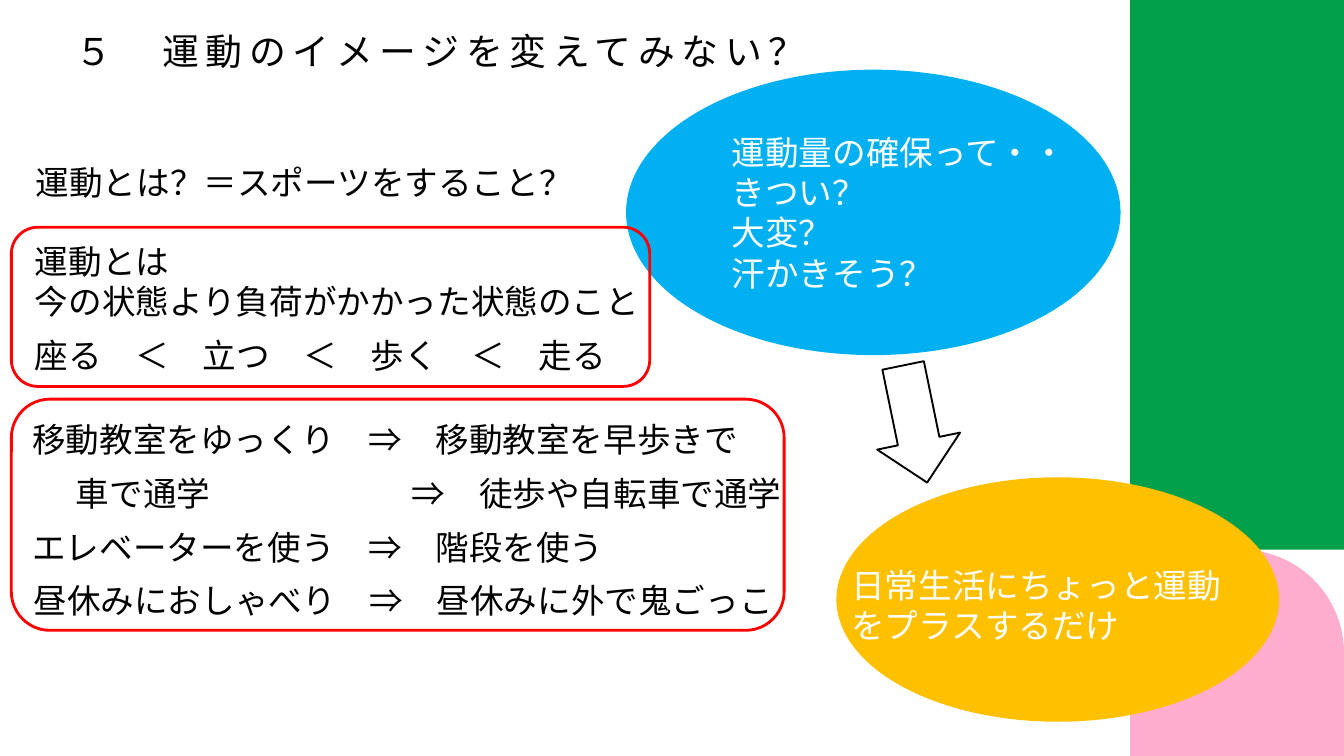
from lxml import etree
from pptx import Presentation
from pptx.dml.color import RGBColor
from pptx.enum.shapes import MSO_SHAPE as Preset
from pptx.enum.text import PP_ALIGN as Align
from pptx.oxml.ns import qn
from pptx.util import Cm, Pt

FONT = "Noto Sans CJK JP"
COLORS = {
    "green": "02A04A",
    "pink": "FFADCF",
    "orange": "FFC000",
    "blue": "00B0F0",
    "red": "FF0000",
    "black": "000000",
    "white": "FFFFFF",
}
# Left edge and wording of each everyday change; the tab lines up the arrow
CHANGES = [
    (1.22, "移動教室をゆっくり　⇒　移動教室を早歩きで"),
    (2.87, "車で通学\t⇒　徒歩や自転車で通学"),
    (1.22, "エレベーターを使う　⇒　階段を使う"),
    (1.27, "昼休みにおしゃべり　⇒　昼休みに外で鬼ごっこ"),
]
CHANGES_TOP, CHANGES_STEP = 15.85, 2.03
ARROW_TAB = 12.7


def rgb(name):
    return RGBColor.from_string(COLORS[name])


def add_figure(page, preset, place, fill=None, line=None, weight=2):
    figure = page.shapes.add_shape(preset, *map(Cm, place))
    figure.shadow.inherit = False
    if fill:
        figure.fill.solid()
        figure.fill.fore_color.rgb = rgb(fill)
    else:
        figure.fill.background()
    if line:
        figure.line.color.rgb = rgb(line)
        figure.line.width = Pt(weight)
    else:
        figure.line.fill.background()
    return figure


def add_tab_stop(para, position):
    tabs = etree.SubElement(para._p.get_or_add_pPr(), qn("a:tabLst"))
    etree.SubElement(tabs, qn("a:tab"), pos=str(Cm(position)), algn="l")


def add_text(page, text, place, color="black", size=36, leading=43.2, spacing=0):
    """Add a text box without margins; leading and spacing are in points."""
    box = page.shapes.add_textbox(*map(Cm, place))
    frame = box.text_frame
    frame.word_wrap = True
    frame.margin_left = frame.margin_right = 0
    frame.margin_top = frame.margin_bottom = 0
    frame.text = text
    for para in frame.paragraphs:
        para.alignment = Align.LEFT
        para.line_spacing = Pt(leading)
        if "\t" in text:
            add_tab_stop(para, ARROW_TAB)
        for span in para.runs:
            span.font.size = Pt(size)
            span.font.name = FONT
            span.font.color.rgb = rgb(color)
            properties = span._r.get_or_add_rPr()
            etree.SubElement(properties, qn("a:ea"), typeface=FONT)
            if spacing:
                properties.set("spc", str(round(spacing * 100)))


def add_side_panels(page):
    add_figure(page, Preset.RECTANGLE, (42.72, 0, 8.08, 20.78), "green")
    arch = add_figure(page, Preset.ROUND_2_SAME_RECTANGLE,
                      (42.72, 20.78, 8.08, 7.8), "pink")
    arch.adjustments[0] = 0.5


def add_changes(page):
    for row, (left, text) in enumerate(CHANGES):
        top = CHANGES_TOP + row * CHANGES_STEP
        add_text(page, text, (left, top, 29.3, 1.52))


def main():
    deck = Presentation()
    deck.slide_width, deck.slide_height = Cm(50.8), Cm(28.58)
    page = deck.slides.add_slide(deck.slide_layouts[6])

    add_side_panels(page)
    add_figure(page, Preset.OVAL, (31.65, 18.08, 16.66, 9.17), "orange", "orange")
    add_figure(page, Preset.OVAL, (23.7, 2.67, 18.62, 10.72), "blue", "blue")

    add_text(page, "運動とは\n今の状態より負荷がかかった状態のこと",
             (1.32, 9.09, 24.26, 3.05))
    add_text(page, "５　運動のイメージを変えてみない？", (2.84, 1.5, 32.21, 1.27),
             size=39.5, leading=35.6, spacing=7.2)
    add_text(page, "運動とは？＝スポーツをすること？", (1.35, 6.12, 22.35, 1.52))
    add_text(page, "座る　＜　立つ　＜　歩く　＜　走る", (1.32, 12.65, 24.26, 1.52))
    add_changes(page)
    add_text(page, "日常生活にちょっと運動をプラスするだけ",
             (32.18, 21.36, 14.81, 3.07), "white")
    add_text(page, "運動量の確保って・・\nきつい？\n大変？\n汗かきそう？",
             (27.66, 4.98, 14.81, 6.12), "white")

    arrow = add_figure(page, Preset.RIGHT_ARROW, (32.33, 14.43, 4.52, 3.2),
                       "white", "black")
    arrow.rotation = 78.4
    for frame in ((0.43, 8.59, 24.13, 6.02), (0.43, 15.09, 29.21, 8.74)):
        add_figure(page, Preset.ROUNDED_RECTANGLE, frame, line="red", weight=3)

    deck.save("out.pptx")


if __name__ == "__main__":
    main()
